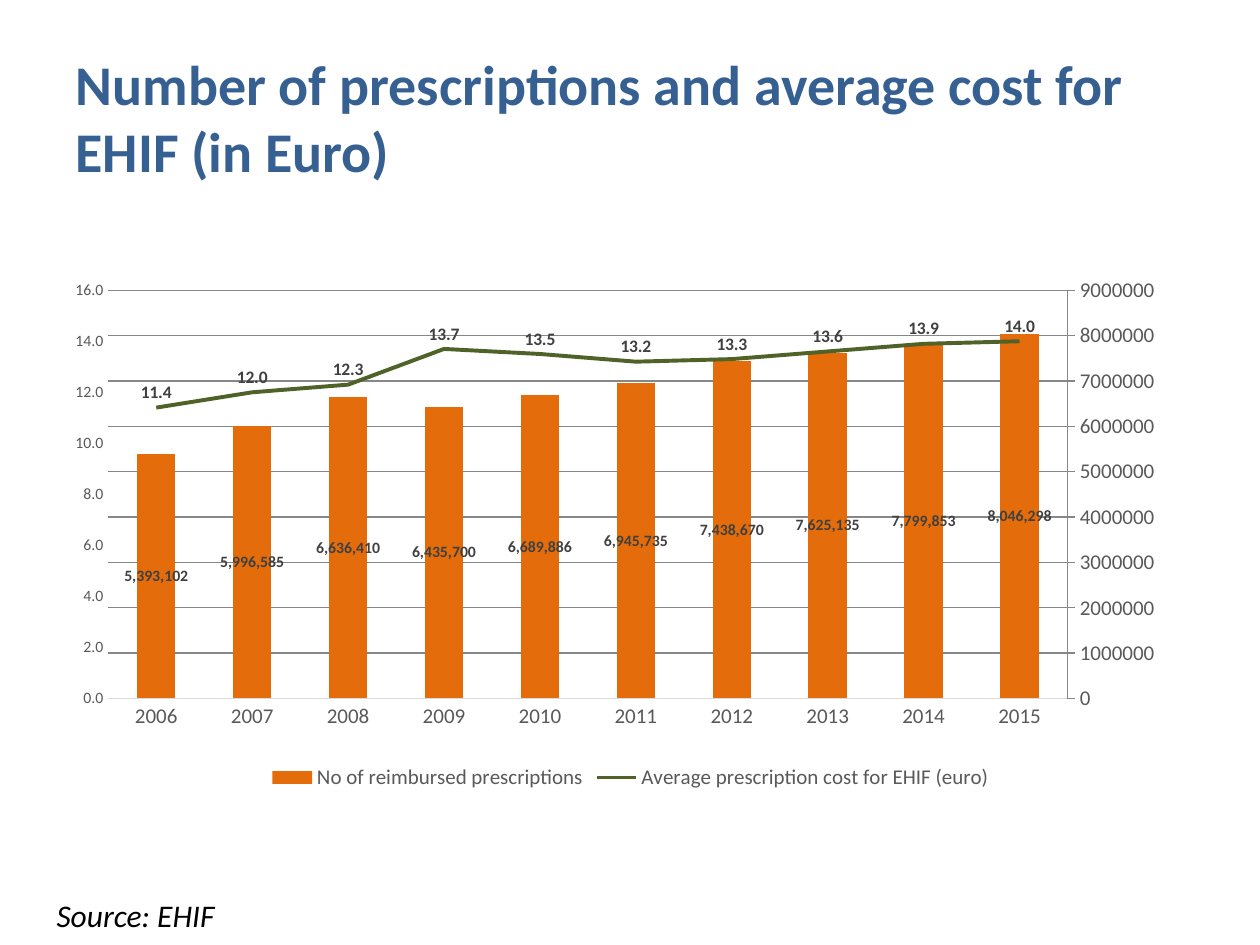
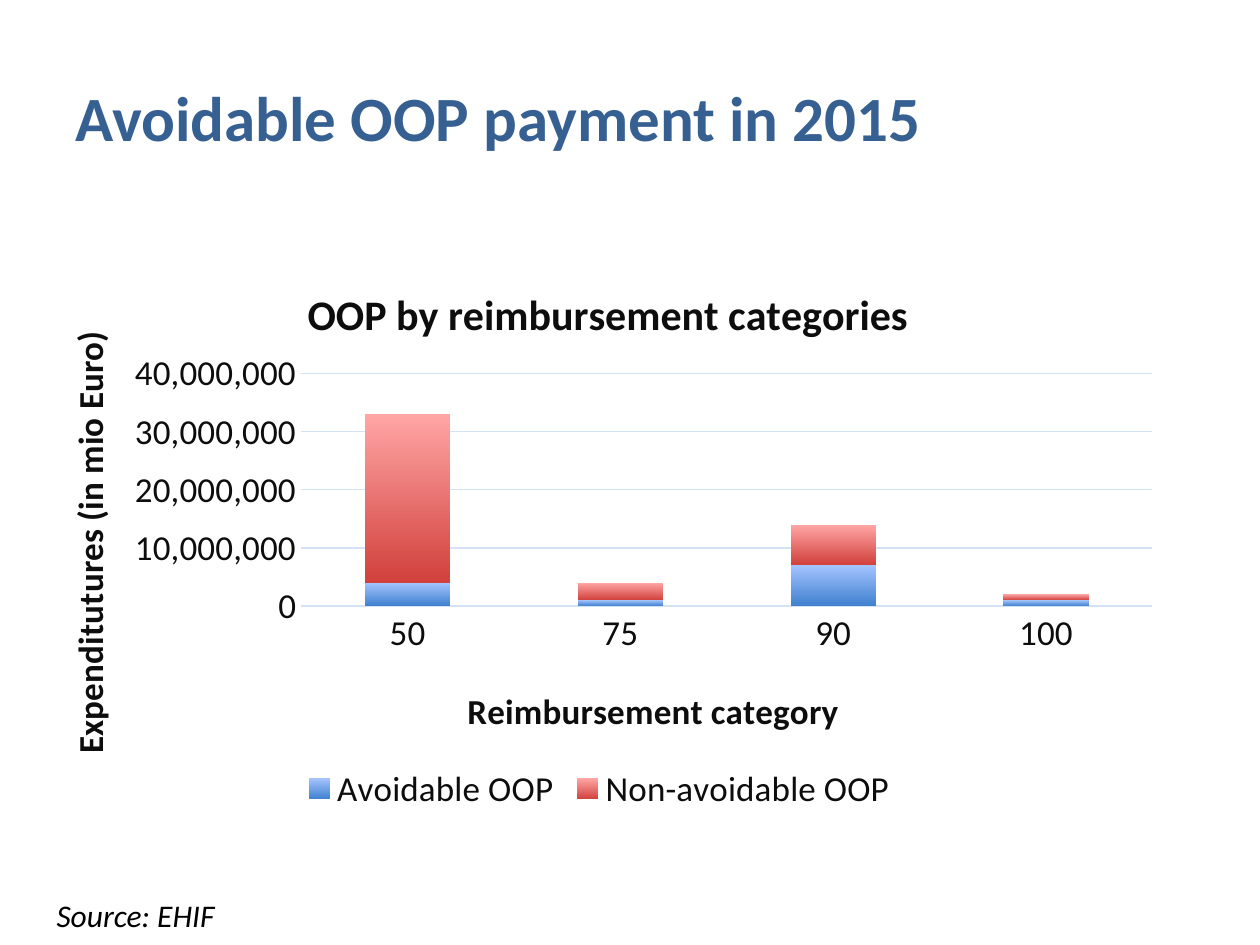
from copy import deepcopy

from lxml.etree import SubElement
from pptx import Presentation
from pptx.chart.axis import CategoryAxis, ValueAxis
from pptx.chart.data import CategoryChartData
from pptx.dml.color import RGBColor
from pptx.enum.chart import (XL_CHART_TYPE as ChartType, XL_LABEL_POSITION as LabelPos,
                             XL_LEGEND_POSITION as LegendPos, XL_MARKER_STYLE as Marker,
                             XL_TICK_MARK as Tick)
from pptx.enum.text import MSO_ANCHOR as Anchor, PP_ALIGN as Align
from pptx.oxml import parse_xml
from pptx.oxml.ns import nsdecls, qn
from pptx.util import Inches, Pt

FONT = "Calibri"
BLACK = RGBColor(0x00, 0x00, 0x00)
TITLE_BLUE = RGBColor(0x37, 0x60, 0x92)
GREY = RGBColor(0x59, 0x59, 0x59)
LABEL_GREY = RGBColor(0x40, 0x40, 0x40)
GRID_GREY = RGBColor(0xD9, 0xD9, 0xD9)
ORANGE = RGBColor(0xE4, 0x6C, 0x0A)
OLIVE = RGBColor(0x4F, 0x62, 0x28)
INK = RGBColor(0x0D, 0x0D, 0x0D)
GRID_BLUE = RGBColor(0xD4, 0xE3, 0xF4)
BLUES = (RGBColor(0x3F, 0x80, 0xCE), RGBColor(0xA4, 0xC4, 0xFF))
REDS = (RGBColor(0xD1, 0x40, 0x3C), RGBColor(0xFF, 0xA6, 0xA5))

WIDTH, HEIGHT = 10, 7.5
TITLE_BOX = (0.5, 0.3, 9, 1.25)
SOURCE_BOX = (0.35, 7.06, 3.32, 0.4)
COST_BOX = (0.43, 2.15, 9.15, 4.16)
PAYMENT_BOX = (0.19, 1.94, 9.13, 4.55)

YEARS = [str(year) for year in range(2006, 2016)]
PRESCRIPTIONS = [5393102, 5996585, 6636410, 6435700, 6689886,
                 6945735, 7438670, 7625135, 7799853, 8046298]
COSTS = [11.4, 12.0, 12.3, 13.7, 13.5, 13.2, 13.3, 13.6, 13.9, 14.0]
AVOIDABLE = [4000000, 1000000, 7000000, 1000000]
NON_AVOIDABLE = [29000000, 3000000, 7000000, 1000000]


def set_font(font, size, color, bold=False, italic=False):
    """Apply the shared typeface and the given format."""
    font.name, font.size, font.bold, font.italic = FONT, Pt(size), bold, italic
    font.color.rgb = color


def write(frame, text, **style):
    """Put one left-aligned, formatted paragraph into a text frame."""
    paragraph = frame.paragraphs[0]
    paragraph.alignment = Align.LEFT
    run = paragraph.add_run()
    run.text = text
    set_font(run.font, **style)


def add_page(deck, title, title_size):
    """Add a slide with its headline and source note."""
    slide = deck.slides.add_slide(deck.slide_layouts[5])
    headline = slide.shapes.title
    headline.left, headline.top, headline.width, headline.height = map(Inches, TITLE_BOX)
    headline.text_frame.vertical_anchor = Anchor.MIDDLE
    write(headline.text_frame, title, size=title_size, color=TITLE_BLUE, bold=True)
    source = slide.shapes.add_textbox(*map(Inches, SOURCE_BOX)).text_frame
    source.word_wrap = True
    write(source, "Source: EHIF", size=18, color=BLACK, italic=True)
    return slide


def layout_xml(x, y, w=None, h=None):
    """Make a manual layout from shares of the chart's size."""
    layout = parse_xml(f"<c:layout {nsdecls('c')}><c:manualLayout/></c:layout>")
    entries = [("xMode", "edge"), ("yMode", "edge"), ("x", x), ("y", y)]
    if w:
        entries = [("layoutTarget", "inner")] + entries + [("w", w), ("h", h)]
    for tag, value in entries:
        SubElement(layout[0], qn(f"c:{tag}")).set("val", str(value))
    return layout


def drop(parent, tag):
    """Remove all children with the given tag from a chart part."""
    for child in parent.findall(qn(tag)):
        parent.remove(child)


def add_column_chart(slide, kind, box, categories, series, plot, size, color):
    """Add a column chart with its plot area, legend and base font."""
    data = CategoryChartData(number_format="General")
    data.categories = categories
    for name, values in series:
        data.add_series(name, values)
    chart = slide.shapes.add_chart(kind, *map(Inches, box), data).chart
    set_font(chart.font, size, color)
    chart.has_title = False
    chart.has_legend = True
    chart.legend.position = LegendPos.BOTTOM
    chart.legend.include_in_layout = False
    set_font(chart.legend.font, size, color)
    chart.plots[0].gap_width = 150
    chart.plots[0].vary_by_categories = False
    area = chart.plots[0]._element.getparent()
    drop(area, "c:layout")
    area.insert(0, layout_xml(*plot))
    return chart


def style_axis(axis, size, color, line=None, grid=None, tick=Tick.NONE):
    """Format the labels, line and gridlines of an axis."""
    set_font(axis.tick_labels.font, size, color)
    axis.major_tick_mark, axis.minor_tick_mark = tick, Tick.NONE
    axis.has_major_gridlines = grid is not None
    if grid is not None:
        axis.major_gridlines.format.line.color.rgb = grid
        axis.major_gridlines.format.line.width = Pt(0.75)
    if line is None:
        axis.format.line.fill.background()
    else:
        axis.format.line.color.rgb = line
        axis.format.line.width = Pt(0.75)


def scale_axis(axis, top, step, number_format):
    """Set the range and number format of a value axis."""
    axis.minimum_scale, axis.maximum_scale, axis.major_unit = 0, top, step
    axis.tick_labels.number_format = number_format
    axis.tick_labels.number_format_is_linked = False


def label_values(series, size, position, number_format):
    """Show bold value labels on a series."""
    labels = series.data_labels
    labels.show_value = True
    labels.position = position
    labels.number_format, labels.number_format_is_linked = number_format, False
    set_font(labels.font, size, LABEL_GREY, bold=True)


def split_off_line(chart):
    """Turn the last series into a line on its own axes and return these."""
    bars = chart.plots[0]._element
    area = bars.getparent()
    line = parse_xml(
        f'<c:lineChart {nsdecls("c")}><c:grouping val="standard"/><c:varyColors val="0"/>'
        '<c:marker val="1"/><c:axId val="5001"/><c:axId val="5002"/></c:lineChart>')
    cost = bars.findall(qn("c:ser"))[-1]
    drop(cost, "c:invertIfNegative")
    line.insert(2, cost)
    bars.addnext(line)
    years, values = (deepcopy(area.find(qn(tag))) for tag in ("c:catAx", "c:valAx"))
    for axis, own, other in ((years, "5001", "5002"), (values, "5002", "5001")):
        axis.find(qn("c:axId")).set("val", own)
        axis.find(qn("c:crossAx")).set("val", other)
    count_axis = area.find(qn("c:valAx"))
    count_axis.find(qn("c:axPos")).set("val", "r")
    count_axis.find(qn("c:crosses")).set("val", "max")
    count_axis.addnext(years)
    years.addnext(values)
    return CategoryAxis(years), ValueAxis(values)


def add_cost_chart(slide, box):
    """Draw prescriptions as columns and their average cost as a line."""
    series = (("No of reimbursed prescriptions", PRESCRIPTIONS),
              ("Average prescription cost for EHIF (euro)", COSTS))
    chart = add_column_chart(slide, ChartType.COLUMN_CLUSTERED, box, YEARS, series,
                             (0.047, 0.037, 0.832, 0.779), 12, GREY)
    year_axis, cost_axis = split_off_line(chart)
    chart.category_axis.visible = False
    style_axis(chart.value_axis, 12, GREY)
    scale_axis(chart.value_axis, 9000000, 1000000, "#,##0")
    style_axis(year_axis, 12, GREY, line=GRID_GREY)
    style_axis(cost_axis, 9, GREY, grid=GRID_GREY)
    scale_axis(cost_axis, 16, 2, "0.0")
    columns, line = (plot.series[0] for plot in chart.plots)
    columns.format.fill.solid()
    columns.format.fill.fore_color.rgb = ORANGE
    label_values(columns, 9, LabelPos.CENTER, "#,##0")
    line.format.line.color.rgb = OLIVE
    line.format.line.width = Pt(2.25)
    line.marker.style = Marker.NONE
    line.smooth = False
    label_values(line, 10, LabelPos.ABOVE, "0.0")


def set_caption(owner, text, size, x, y):
    """Give a chart or an axis a placed, bold caption."""
    owner.has_title = True
    caption = owner.chart_title if hasattr(owner, "chart_title") else owner.axis_title
    write(caption.text_frame, text, size=size, color=INK, bold=True)
    title = caption._element
    drop(title, "c:layout")
    title.find(qn("c:tx")).addnext(layout_xml(x, y))


def add_payment_chart(slide, box):
    """Draw out-of-pocket payments as stacked columns."""
    series = (("Avoidable OOP", AVOIDABLE), ("Non-avoidable OOP", NON_AVOIDABLE))
    chart = add_column_chart(slide, ChartType.COLUMN_STACKED, box, ["50", "75", "90", "100"],
                             series, (0.241, 0.225, 0.74, 0.406), 20, INK)
    chart.plots[0].overlap = 100
    style_axis(chart.category_axis, 20, INK, line=GRID_BLUE)
    style_axis(chart.value_axis, 20, INK, grid=GRID_BLUE)
    scale_axis(chart.value_axis, 40000000, 10000000, "#,##0")
    set_caption(chart, "OOP by reimbursement categories", 24, 0.24, 0.06)
    set_caption(chart.category_axis, "Reimbursement category", 20, 0.38, 0.76)
    set_caption(chart.value_axis, "Expenditutures (in mio Euro)", 20, 0.03, 0.14)
    for part, shades in zip(chart.plots[0].series, (BLUES, REDS)):
        fill = part.format.fill
        fill.gradient()
        fill.gradient_angle = 90
        for stop, position, shade in zip(fill.gradient_stops, (0, 1), shades):
            stop.position, stop.color.rgb = position, shade


def main():
    """Build and save the deck."""
    deck = Presentation()
    deck.slide_width, deck.slide_height = Inches(WIDTH), Inches(HEIGHT)
    cost_title = "Number of prescriptions and average cost for EHIF (in Euro)"
    add_cost_chart(add_page(deck, cost_title, 32), COST_BOX)
    add_payment_chart(add_page(deck, "Avoidable OOP payment in 2015", 36), PAYMENT_BOX)
    deck.save("out.pptx")


if __name__ == "__main__":
    main()
